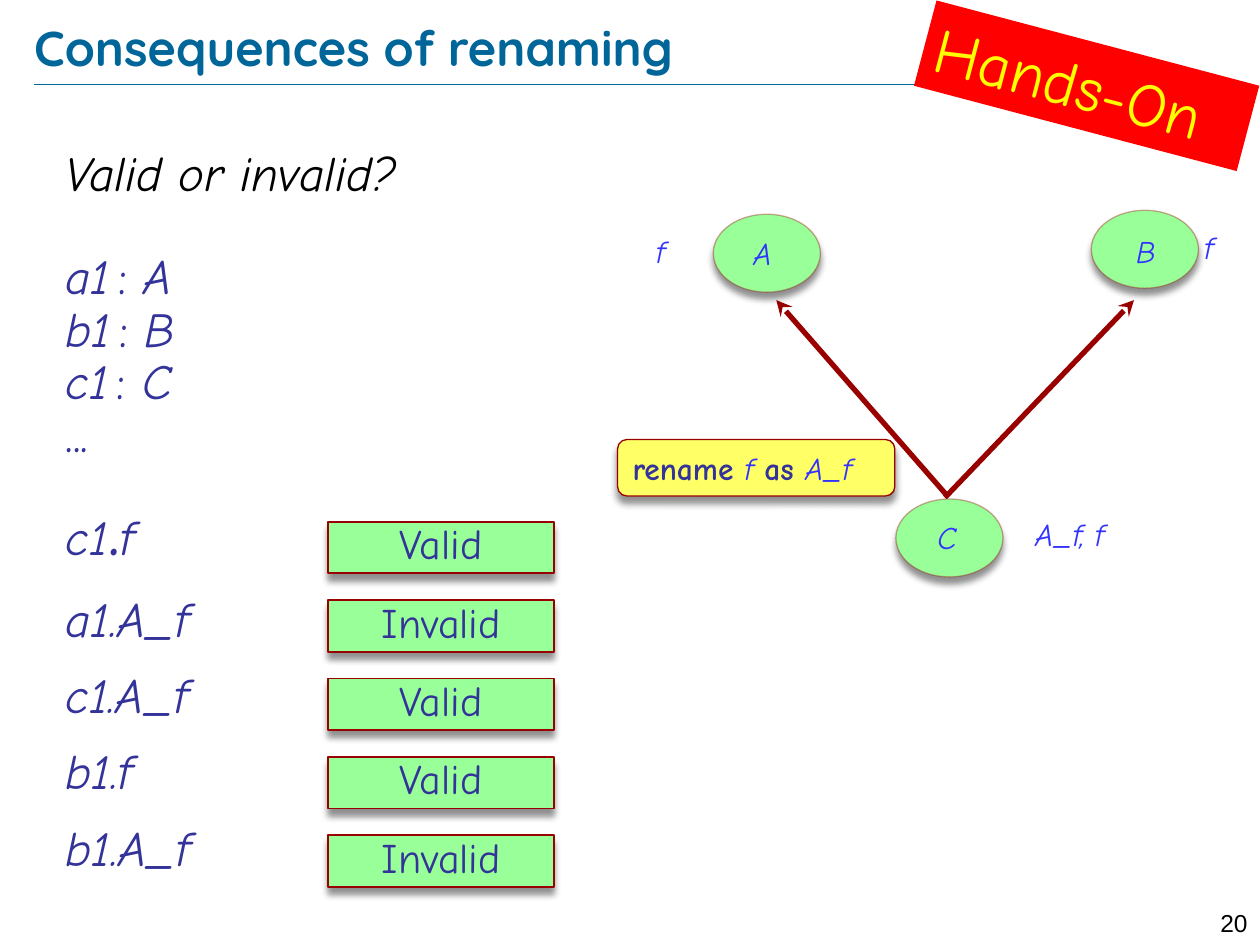
from lxml.etree import SubElement
from pptx import Presentation
from pptx.dml.color import RGBColor
from pptx.enum.shapes import MSO_CONNECTOR, MSO_SHAPE
from pptx.enum.text import MSO_ANCHOR, MSO_AUTO_SIZE, PP_ALIGN
from pptx.oxml.ns import qn
from pptx.util import Cm, Pt

HAND = "Comic Neue"
NAVY, BLUE, TEAL, RED, GREEN = "333399", "3333FF", "006699", "990000", "99FF99"
PLAIN = {"name": HAND, "size": Pt(28), "color": NAVY, "bold": False, "italic": False}
SLANTED = PLAIN | {"italic": True}
LABEL = SLANTED | {"size": Pt(18), "color": BLUE}
KEYWORD = LABEL | {"color": NAVY, "bold": True, "italic": False}


def colour(code):
    return RGBColor.from_string(code)


def set_values(target, values):
    for name, value in values.items():
        if name == "color":
            target.color.rgb = colour(value)
        else:
            setattr(target, name, value)


def add_spans(para, spans):
    for text, values in spans:
        span = para.add_run()
        span.text = text
        set_values(span.font, values)


def place(shape, left, top, width, height):
    set_values(shape, {"left": Cm(left), "top": Cm(top),
                       "width": Cm(width), "height": Cm(height)})


def write(shape, spans, align=PP_ALIGN.LEFT, anchor=MSO_ANCHOR.TOP, spacing=1.0):
    set_values(shape.text_frame, {"word_wrap": True, "vertical_anchor": anchor})
    para = shape.text_frame.paragraphs[0]
    set_values(para, {"alignment": align, "line_spacing": spacing})
    add_spans(para, spans)


def add_label(page, box, spans, **layout):
    write(page.shapes.add_textbox(*map(Cm, box)), spans, **layout)


def add_block(page, kind, box, fill, line=None, width=0.75):
    shape = page.shapes.add_shape(kind, *map(Cm, box))
    shape.shadow.inherit = False
    shape.fill.solid()
    shape.fill.fore_color.rgb = colour(fill)
    if line:
        shape.line.color.rgb = colour(line)
        shape.line.width = Pt(width)
        add_shadow(shape)
    else:
        shape.line.fill.background()
    return shape


def add_shadow(shape):
    effects = shape._element.spPr.find(qn("a:effectLst"))
    shadow = SubElement(effects, qn("a:outerShdw"), blurRad=str(Pt(4)),
                        dist=str(Pt(4)), dir="5400000", rotWithShape="0")
    black = SubElement(shadow, qn("a:srgbClr"), val="000000")
    SubElement(black, qn("a:alpha"), val="43000")


def add_line(page, start, end, line, width, arrow=False):
    connector = page.shapes.add_connector(
        MSO_CONNECTOR.STRAIGHT, *map(Cm, (*start, *end)))
    connector.line.color.rgb = colour(line)
    connector.line.width = Pt(width)
    if arrow:
        SubElement(connector.line._get_or_add_ln(), qn("a:tailEnd"), type="stealth")
    SubElement(connector._element.spPr, qn("a:effectLst"))


def add_heading(page, left, top, width, height):
    add_line(page, (left, top + 1.37), (left + 20.01, top + 1.37), TEAL, 0.25)
    title = page.shapes.title
    place(title, left, top, width, height)
    set_values(title.text_frame, dict.fromkeys(
        ("margin_left", "margin_top", "margin_right", "margin_bottom"), 0))
    write(title, [("Consequences of renaming", PLAIN | {
        "name": "Quicksand", "color": TEAL, "bold": True})], anchor=MSO_ANCHOR.MIDDLE)


def add_questions(page, left, top, width, height):
    body = page.placeholders[1]
    place(body, left, top, width, height)
    frame = body.text_frame
    set_values(frame, {"auto_size": MSO_AUTO_SIZE.NONE, "word_wrap": True,
                       "vertical_anchor": MSO_ANCHOR.TOP})
    rows = [([("Valid or invalid?", SLANTED | {"color": "000000"})], 0.7, 0)]
    for name, kind, before in (("a1", "A", 35.5), ("b1", "B", 6.5), ("c1", "C", 6.5)):
        rows.append(([(name, SLANTED), (" ", SLANTED | {"size": Pt(14)}),
                      (": ", PLAIN), (kind, SLANTED)], 0.7, before))
    rows.append(([("...", PLAIN)], 0.7, 6.5))
    rows.append(([("c1", SLANTED), (".", PLAIN | {"size": Pt(44)}),
                  ("f", SLANTED)], 1.0, 10))
    rows += [([(call, SLANTED)], 1.0, 10)
             for call in ("a1.A_f", "c1.A_f", "b1.f", "b1.A_f")]
    for index, (spans, spacing, before) in enumerate(rows):
        para = frame.add_paragraph() if index else frame.paragraphs[0]
        properties = para._p.get_or_add_pPr()
        properties.set("marL", "0")
        properties.set("indent", "0")
        SubElement(properties, qn("a:buNone"))
        set_values(para, {"line_spacing": spacing, "space_before": Pt(before)})
        add_spans(para, spans)


def add_answers(page, left, top, width, height):
    pitch = 1.58
    for row, answer in enumerate(("Valid", "Invalid", "Valid", "Valid", "Invalid")):
        box = (left, top + row * pitch, width, height)
        block = add_block(page, MSO_SHAPE.RECTANGLE, box, GREEN, RED, 1)
        set_values(block.text_frame, {"margin_left": 0, "margin_right": 0})
        write(block, [(answer, PLAIN | {"size": Pt(24)})],
              PP_ALIGN.CENTER, MSO_ANCHOR.MIDDLE, 0.8)


def add_class_diagram(page, left, top):
    for start, end in (((6.6, 5.79), (10.41, 1.81)), ((6.65, 5.76), (3.2, 1.81))):
        add_line(page, (left + start[0], top + start[1]),
                 (left + end[0], top + end[1]), RED, 3, arrow=True)

    callout = add_block(page, MSO_SHAPE.ROUNDED_RECTANGLE,
                        (left, top + 4.62, 5.59, 1.14), "FFFF66", RED)
    write(callout, [("rename ", KEYWORD), ("f ", LABEL), ("as ", KEYWORD),
                    ("A_f", LABEL)], anchor=MSO_ANCHOR.MIDDLE)

    for x, y in ((5.61, 5.82), (9.55, 0), (1.93, 0.08)):
        node = add_block(page, MSO_SHAPE.OVAL, (left + x, top + y, 2.16, 1.57), GREEN, RED)
        line_colour = node.line._get_or_add_ln().find(".//" + qn("a:srgbClr"))
        SubElement(line_colour, qn("a:alpha"), val="34000")

    for text, x, y, width, align in (("C", 4.62, 6.07, 4.04, PP_ALIGN.CENTER),
                                     ("A", 2.49, 0.36, 2.77, PP_ALIGN.LEFT),
                                     ("B", 9.19, 0.31, 2.92, PP_ALIGN.CENTER)):
        add_label(page, (left + x, top + y, width, 1.02), [(text, LABEL)], align=align)
    for text, x, y, width in (("f", 0.53, 0.64, 2.03), ("A_f, f", 8.17, 6.35, 3.12),
                              ("f", 11.58, 0.56, 2.03)):
        add_label(page, (left + x, top + y, width, 0.71), [(text, LABEL)], spacing=0.5)


def add_banner(page, *box):
    banner = add_block(page, MSO_SHAPE.RECTANGLE, box, "FF0000")
    banner.rotation = 14.8
    write(banner, [("Hands-On", PLAIN | {"size": Pt(36), "color": "FFFF00"})])


def add_page_number(page, *box):
    number = PLAIN | {"name": "Arial", "size": Pt(14), "color": "000000"}
    add_label(page, box, [("20", number)], align=PP_ALIGN.RIGHT)


def main():
    deck = Presentation()
    set_values(deck, {"slide_width": Cm(25.4), "slide_height": Cm(19.05)})
    page = deck.slides.add_slide(deck.slide_layouts[1])
    add_heading(page, 0.69, 0.33, 22.07, 1.22)
    add_page_number(page, 24, 18.19, 1.4, 0.61)
    add_questions(page, 1.07, 3.07, 11.2, 15.04)
    add_class_diagram(page, 12.45, 4.24)
    add_banner(page, 18.54, 0.84, 6.73, 1.78)
    add_answers(page, 6.62, 10.52, 4.55, 1.04)
    deck.save("out.pptx")


if __name__ == "__main__":
    main()
